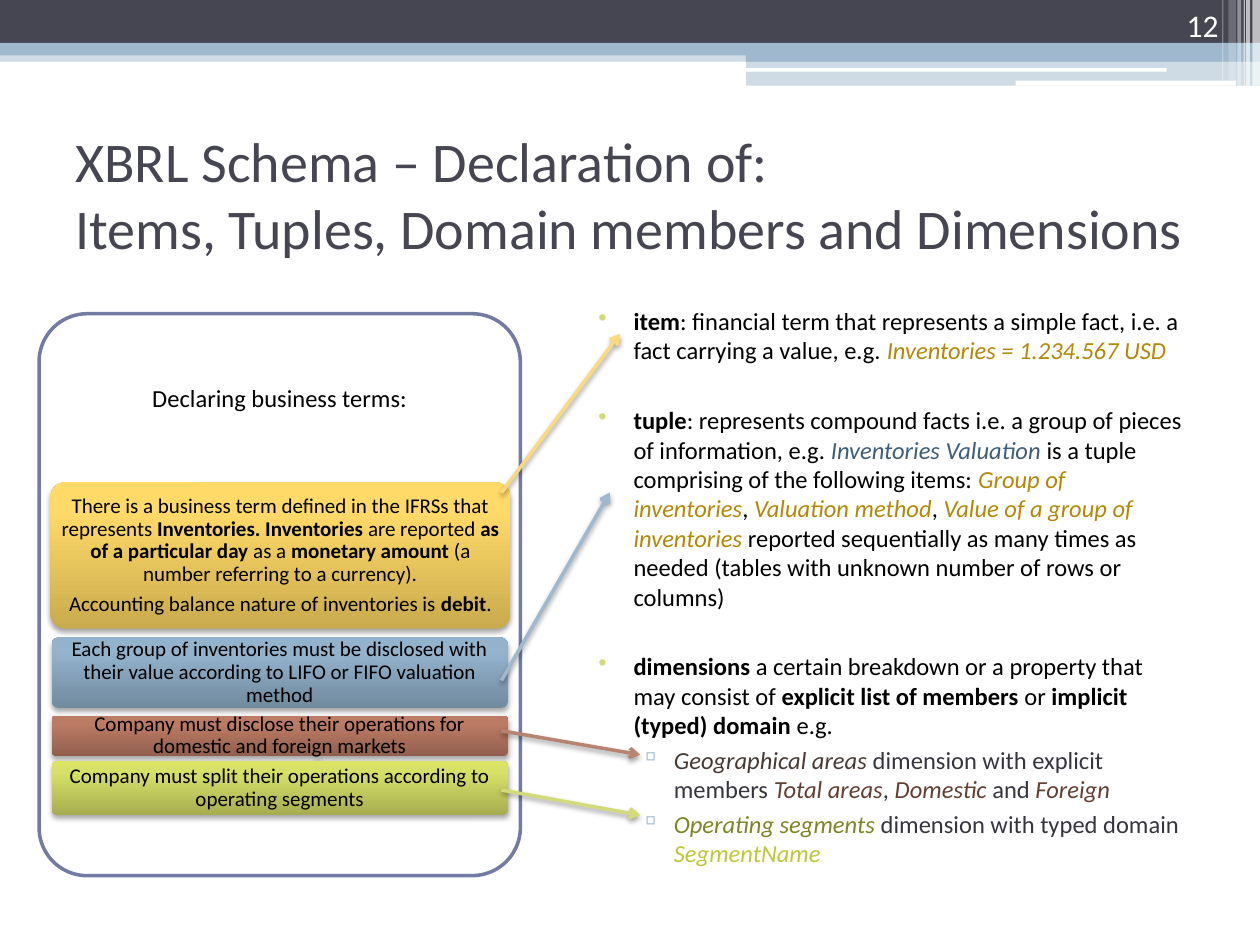
from copy import deepcopy

from lxml.etree import SubElement
from pptx import Presentation
from pptx.dml.color import RGBColor
from pptx.enum.shapes import MSO_CONNECTOR, MSO_SHAPE
from pptx.enum.text import MSO_ANCHOR, PP_ALIGN
from pptx.oxml.ns import qn
from pptx.util import Inches, Pt

FONT = "Calibri"
WHITE, BLACK, DARK, BLUE = "FFFFFF", "000000", "464653", "9FB8CD"
GOLD, NAVY, BROWN, GREY = "B38807", "3E5D78", "633F32", "35353E"

# left, top, width, height, colour, opacity in percent
HEADER_BARS = [
    (0, 0.4, 10, 0.09, BLUE, 50),
    (0, 0, 10, 0.34, DARK, 100),
    (0, 0.34, 10, 0.1, BLUE, 100),
    (5.92, 0.39, 4.08, 0.1, BLUE, 100),
    (5.92, 0.48, 4.08, 0.2, BLUE, 50),
    (5.91, 0.54, 3.35, 0.03, WHITE, 100),
    (8.06, 0.64, 1.75, 0.04, WHITE, 100),
    (9.94, 0, 0.06, 0.68, WHITE, 65),
    (9.89, 0, 0.03, 0.68, WHITE, 65),
    (9.87, 0, 0.01, 0.68, WHITE, 60),
    (9.82, 0, 0.03, 0.68, WHITE, 40),
    (9.75, 0, 0.06, 0.64, WHITE, 20),
    (9.7, 0, 0.01, 0.64, WHITE, 30),
]

# Runs are (text, colour, style), where style holds "b" and/or "i".
# level, space before in points, runs
DEFINITIONS = [
    (0, 0, [
        ("item", BLACK, "b"),
        (": financial term that represents a simple fact, i.e. a fact carrying a value, e.g. ", BLACK, ""),
        ("Inventories = 1.234.567 USD", GOLD, "i")]),
    (0, 23, [
        ("tuple", BLACK, "b"),
        (": represents compound facts i.e. a group of pieces of information, e.g. ", BLACK, ""),
        ("Inventories Valuation ", NAVY, "i"),
        ("is a tuple comprising of the following items: ", BLACK, ""),
        ("Group of inventories", GOLD, "i"), (", ", BLACK, ""),
        ("Valuation method", GOLD, "i"), (", ", BLACK, ""),
        ("Value of a group of inventories", GOLD, "i"),
        (" reported sequentially as many times as needed "
         "(tables with unknown number of rows or columns)", BLACK, "")]),
    (0, 23, [
        ("dimensions", BLACK, "b"),
        (" a certain breakdown or a property that may consist of ", BLACK, ""),
        ("explicit list of members", BLACK, "b"), (" or ", BLACK, ""),
        ("implicit (typed) domain ", BLACK, "b"), ("e.g.", BLACK, "")]),
    (1, 3, [
        ("Geographical areas ", "473A35", "i"),
        ("dimension with explicit members ", GREY, ""),
        ("Total areas", BROWN, "i"), (", ", GREY, ""),
        ("Domestic ", BROWN, "i"), ("and ", GREY, ""), ("Foreign", BROWN, "i")]),
    (1, 3, [
        ("Operating segments ", "7D8525", "i"),
        ("dimension with typed domain ", GREY, ""),
        ("SegmentName", "BCC838", "i")]),
]

# level: bullet, bullet colour, left margin, first-line indent
BULLETS = [("•", "D2DA7A", 0.4, -0.28), ("▫", BLUE, 0.72, -0.27)]

# box, gradient colours from bottom to top, paragraphs of runs
TERM_CARDS = [
    ((0.4, 3.83, 3.65, 1.16), ("C9AA4D", "FFDA69", "FFDA6B"), [
        [("There is a business term defined in the IFRSs that represents ", BLACK, ""),
         ("Inventories. Inventories", BLACK, "b"), (" are reported ", BLACK, ""),
         ("as of a particular day ", BLACK, "b"), ("as a ", BLACK, ""),
         ("monetary amount ", BLACK, "b"),
         ("(a number referring to a currency).", BLACK, "")],
        [("Accounting balance nature of inventories is ", BLACK, ""),
         ("debit", BLACK, "b"), (".", BLACK, "")]]),
    ((0.41, 5.06, 3.62, 0.56), ("718A9E", "93B3CD", "93B4CF"), [
        [("Each group of inventories must be disclosed with their value "
          "according to LIFO or FIFO valuation method", BLACK, "")]]),
    ((0.41, 5.68, 3.62, 0.32), ("915F4D", "BC7B64", "BF7B63"), [
        [("Company must disclose their operations for domestic and foreign markets", BLACK, "")]]),
    ((0.41, 6.04, 3.62, 0.43), ("A6AD50", "D7E168", "DAE566"), [
        [("Company must split their operations according to operating segments", BLACK, "")]]),
]

ARROW_LEFT = 3.98
# start y, end x, end y, colour
ARROWS = [
    (3.91, 4.92, 2.65, "FADA7A"),
    (5.4, 4.84, 3.91, BLUE),
    (5.8, 5.08, 5.99, "B88472"),
    (6.27, 5.08, 6.47, "D2DA7A"),
]


def color(value):
    return RGBColor.from_string(value)


def add_runs(paragraph, runs, size):
    for text, run_color, style in runs:
        run = paragraph.add_run()
        run.text = text
        run.font.name = FONT
        run.font.size = Pt(size)
        run.font.color.rgb = color(run_color)
        run.font.bold = "b" in style
        run.font.italic = "i" in style


def set_frame(text_frame, anchor, horizontal=0.1, vertical=0.05):
    text_frame.word_wrap = True
    text_frame.vertical_anchor = anchor
    text_frame.margin_left = text_frame.margin_right = Inches(horizontal)
    text_frame.margin_top = text_frame.margin_bottom = Inches(vertical)


def add_label(slide, box, text, size, text_color, anchor=MSO_ANCHOR.MIDDLE, align=PP_ALIGN.LEFT):
    text_frame = slide.shapes.add_textbox(*map(Inches, box)).text_frame
    set_frame(text_frame, anchor)
    paragraph = text_frame.paragraphs[0]
    paragraph.text = text
    paragraph.alignment = align
    for run in paragraph.runs:
        run.font.name = FONT
        run.font.size = Pt(size)
        run.font.color.rgb = color(text_color)


def add_shadow(properties, opacity, distance):
    """Add a soft black shadow that falls straight down."""
    effects = properties.find(qn("a:effectLst"))
    if effects is None:
        effects = SubElement(properties, qn("a:effectLst"))
    shadow = SubElement(effects, qn("a:outerShdw"), blurRad=str(Pt(3.1)),
                        dist=str(Pt(distance)), dir="5400000", rotWithShape="0")
    black = SubElement(shadow, qn("a:srgbClr"), val=BLACK)
    SubElement(black, qn("a:alpha"), val=str(opacity * 1000))


def add_bar(slide, left, top, width, height, fill, opacity):
    bar = slide.shapes.add_shape(MSO_SHAPE.RECTANGLE, *map(Inches, (left, top, width, height)))
    bar.shadow.inherit = False
    bar.line.fill.background()
    bar.fill.solid()
    bar.fill.fore_color.rgb = color(fill)
    if opacity < 100:
        fill_color = bar._element.spPr.find(qn("a:solidFill"))[0]
        SubElement(fill_color, qn("a:alpha"), val=str(opacity * 1000))


def add_rounded(slide, box):
    shape = slide.shapes.add_shape(MSO_SHAPE.ROUNDED_RECTANGLE, *map(Inches, box))
    shape.adjustments[0] = 0.1
    shape.shadow.inherit = False
    return shape


def add_panel(slide, box):
    panel = add_rounded(slide, box)
    panel.fill.solid()
    panel.fill.fore_color.rgb = color(WHITE)
    panel.line.color.rgb = color("727CA3")
    panel.line.width = Pt(2)


def add_card(slide, box, stop_colors, paragraphs):
    card = add_rounded(slide, box)
    card.line.fill.background()
    card.fill.gradient()
    card.fill.gradient_angle = 90
    stops = card._element.spPr.find(qn("a:gradFill")).find(qn("a:gsLst"))
    stops.append(deepcopy(stops[-1]))
    for stop, position, stop_color in zip(card.fill.gradient_stops, (0, 0.8, 1), stop_colors):
        stop.position = position
        stop.color.rgb = color(stop_color)
    add_shadow(card._element.spPr, 35, 1.8)
    text_frame = card.text_frame
    set_frame(text_frame, MSO_ANCHOR.MIDDLE, 0.03, 0.03)
    for index, runs in enumerate(paragraphs):
        paragraph = text_frame.add_paragraph() if index else text_frame.paragraphs[0]
        paragraph.alignment = PP_ALIGN.CENTER
        paragraph.line_spacing = 0.9
        paragraph.space_before = Pt(4 if index else 0)
        add_runs(paragraph, runs, 12)


def add_definitions(slide, box):
    text_frame = slide.shapes.add_textbox(*map(Inches, box)).text_frame
    set_frame(text_frame, MSO_ANCHOR.TOP)
    for index, (level, space_before, runs) in enumerate(DEFINITIONS):
        paragraph = text_frame.add_paragraph() if index else text_frame.paragraphs[0]
        bullet, bullet_color, margin, indent = BULLETS[level]
        properties = paragraph._p.get_or_add_pPr()
        properties.set("marL", str(Inches(margin)))
        properties.set("indent", str(Inches(indent)))
        SubElement(SubElement(properties, qn("a:buClr")), qn("a:srgbClr"), val=bullet_color)
        SubElement(properties, qn("a:buChar"), char=bullet)
        paragraph.level = level
        paragraph.space_before = Pt(space_before)
        add_runs(paragraph, runs, 14)


def add_arrow(slide, start_y, end_x, end_y, line_color):
    ends = map(Inches, (ARROW_LEFT, start_y, end_x, end_y))
    arrow = slide.shapes.add_connector(MSO_CONNECTOR.STRAIGHT, *ends)
    arrow.line.color.rgb = color(line_color)
    arrow.line.width = Pt(2)
    SubElement(arrow.line._get_or_add_ln(), qn("a:tailEnd"), type="arrow")
    add_shadow(arrow._element.spPr, 38, 1.6)


def main():
    presentation = Presentation()
    presentation.slide_width, presentation.slide_height = Inches(10), Inches(7.5)
    slide = presentation.slides.add_slide(presentation.slide_layouts[6])
    for bar in HEADER_BARS:
        add_bar(slide, *bar)
    add_label(slide, (8.94, 0, 0.83, 0.4), "12", 18, WHITE, MSO_ANCHOR.BOTTOM, PP_ALIGN.RIGHT)
    add_label(slide, (0.5, 0.99, 9, 1.09),
              "XBRL Schema – Declaration of:\vItems, Tuples, Domain members and Dimensions", 32, DARK)
    add_definitions(slide, (4.53, 2.38, 4.97, 4.73))
    add_panel(slide, (0.31, 2.49, 3.82, 4.46))
    add_label(slide, (0.31, 2.49, 3.82, 1.34), "Declaring business terms:", 14, BLACK,
              align=PP_ALIGN.CENTER)
    for card in TERM_CARDS:
        add_card(slide, *card)
    for arrow in ARROWS:
        add_arrow(slide, *arrow)
    presentation.save("out.pptx")


if __name__ == "__main__":
    main()
